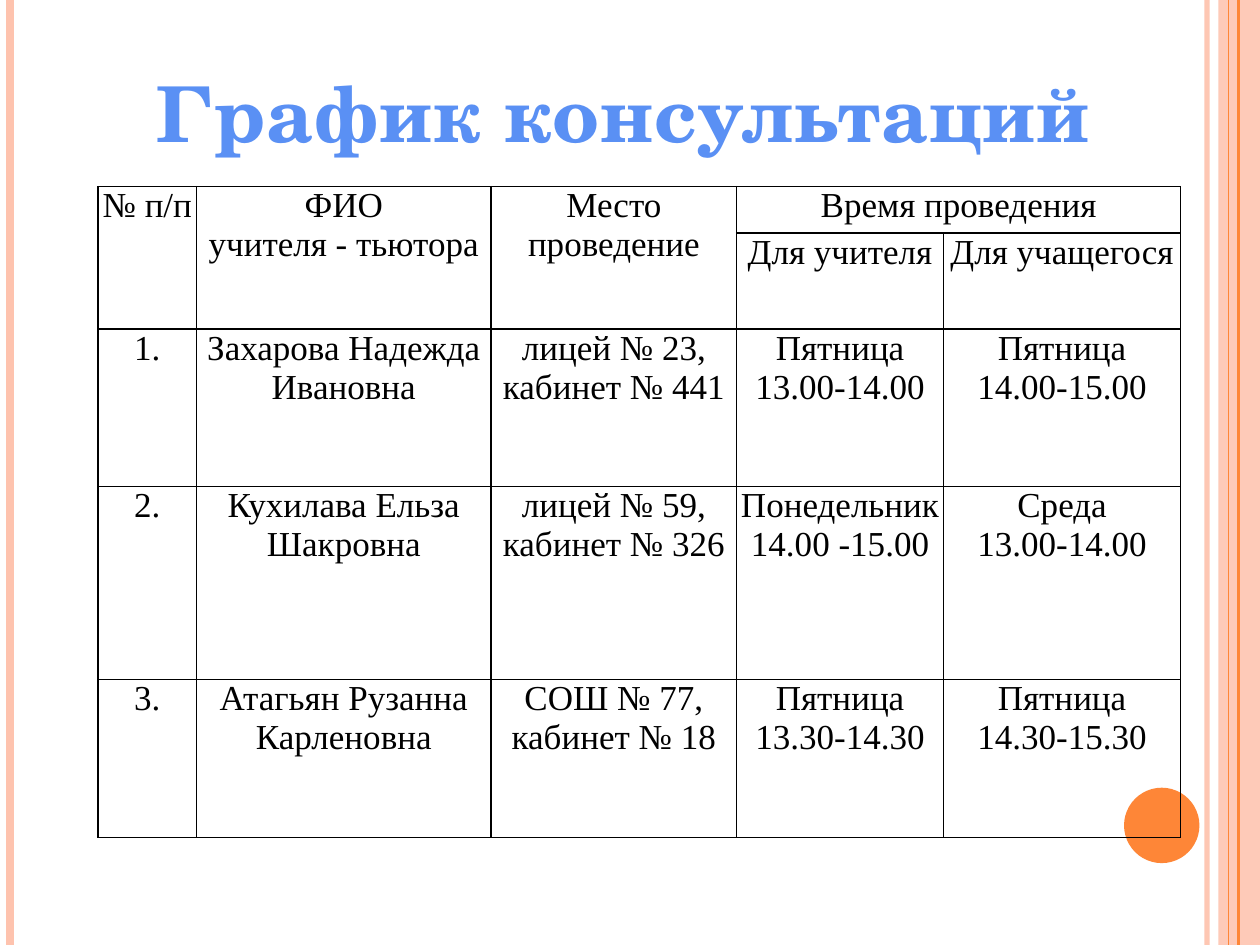
from dataclasses import dataclass
from lxml.etree import SubElement as Sub
from pptx import Presentation
from pptx.dml.color import RGBColor as Rgb
from pptx.enum.shapes import MSO_CONNECTOR as Link, MSO_SHAPE as Kind
from pptx.enum.text import MSO_ANCHOR as Anchor, MSO_AUTO_SIZE as Fit, PP_ALIGN as Align
from pptx.oxml.ns import qn
from pptx.util import Cm, Pt


@dataclass(frozen=True)
class Theme:
    """Colours, fonts and type sizes."""
    pink: str = "FEC3AE"
    orange: str = "FE8637"
    blue: str = "5A90F4"
    ink: str = "000000"
    head: str = "TeX Gyre Schola"
    body: str = "Times New Roman"
    big: int = 44
    text: int = 20


THEME = Theme()
WIDE, HIGH = 25.4, 19.05
RAILS = [
    (24.33, THEME.pink, 3, 93),
    (0.2, THEME.pink, 4.5, 100),
    (24.97, THEME.orange, 1.5, 100),
    (24.77, THEME.orange, 0.75, 100),
]
COLS = [1.98, 5.94, 4.95, 4.17, 4.78]
ROWS = [0.94, 1.93, 3.18, 3.89, 3.18]
CELLS = [
    ["№ п/п", "ФИО\nучителя - тьютора", "Место проведение", "Время проведения", ""],
    ["", "", "", "Для учителя", "Для учащегося"],
    ["1.", "Захарова Надежда Ивановна", "лицей № 23,\nкабинет № 441",
     "Пятница\n13.00-14.00", "Пятница\n14.00-15.00"],
    ["2.", "Кухилава Ельза Шакровна", "лицей № 59,\nкабинет № 326",
     "Понедельник\n14.00 -15.00", "Среда\n13.00-14.00"],
    ["3.", "Атагьян Рузанна Карленовна", "СОШ № 77,\nкабинет № 18",
     "Пятница\n13.30-14.30", "Пятница\n14.30-15.30"],
]


def fade(part, rate):
    """Set the opacity of a solid fill or line, in percent."""
    for tone in part.iter(qn("a:srgbClr")):
        Sub(tone, qn("a:alpha"), val=str(rate * 1000))


def style(para, face, size, tone, bold=False):
    """Centre a paragraph and set its font."""
    para.alignment = Align.CENTER
    font = para.font
    font.name, font.size, font.bold = face, Pt(size), bold
    font.color.rgb = Rgb.from_string(tone)


def paint(slide, kind, box, tone):
    """Add a plain filled shape."""
    shape = slide.shapes.add_shape(kind, *map(Cm, box))
    shape.shadow.inherit = False
    shape.fill.solid()
    shape.fill.fore_color.rgb = Rgb.from_string(tone)
    shape.line.fill.background()
    return shape


def add_frame(slide, box):
    """Draw the side rails, the band and the disc."""
    left, top, wide, high = box
    band = paint(slide, Kind.RECTANGLE, (left + wide - 0.84, top, 0.84, high), THEME.pink)
    fade(band.element.spPr, 87)
    for x, tone, width, rate in RAILS:
        rail = slide.shapes.add_connector(
            Link.STRAIGHT, Cm(left + x), Cm(top), Cm(left + x), Cm(top + high))
        rail.line.width = Pt(width)
        rail.line.color.rgb = Rgb.from_string(tone)
        Sub(rail.element.spPr, qn("a:effectLst"))
        if rate < 100:
            fade(rail.element.spPr, rate)
    paint(slide, Kind.OVAL, (left + 22.66, top + 15.88, 1.52, 1.52), THEME.orange)


def add_title(slide, box):
    """Fill and place the title."""
    title = slide.shapes.title
    title.left, title.top, title.width, title.height = map(Cm, box)
    frame = title.text_frame
    frame.text = "График консультаций"
    frame.word_wrap = False
    frame.auto_size = Fit.SHAPE_TO_FIT_TEXT
    frame.vertical_anchor = Anchor.MIDDLE
    para = frame.paragraphs[0]
    style(para, THEME.head, THEME.big, THEME.blue, True)
    para._p.pPr.find(qn("a:defRPr")).set("spc", "50")


def edge(cell):
    """Rule all four sides of a cell."""
    props = cell._tc.get_or_add_tcPr()
    for side in "LRTB":
        line = Sub(props, qn(f"a:ln{side}"), w=str(Pt(1)))
        fill = Sub(line, qn("a:solidFill"))
        Sub(fill, qn("a:srgbClr"), val=THEME.ink)


def add_plan(slide, box):
    """Build the table of consultations."""
    table = slide.shapes.add_table(len(ROWS), len(COLS), *map(Cm, box)).table
    table.first_row = table.horz_banding = False
    for col, wide in zip(table.columns, COLS):
        col.width = Cm(wide)
    for row, high, texts in zip(table.rows, ROWS, CELLS):
        row.height = Cm(high)
        for cell, text in zip(row.cells, texts):
            edge(cell)
            cell.fill.background()
            cell.margin_left = cell.margin_right = Cm(0.05)
            cell.margin_top = cell.margin_bottom = 0
            cell.text = text
            for para in cell.text_frame.paragraphs:
                style(para, THEME.body, THEME.text, THEME.ink)
    for col in range(3):
        table.cell(0, col).merge(table.cell(1, col))
    table.cell(0, 3).merge(table.cell(0, 4))


def main():
    """Build and save the slide."""
    deck = Presentation()
    deck.slide_width, deck.slide_height = Cm(WIDE), Cm(HIGH)
    slide = deck.slides.add_slide(deck.slide_layouts[5])
    add_frame(slide, (0, 0, WIDE, HIGH))
    add_title(slide, (2.77, 1.19, 19.61, 2.13))
    add_plan(slide, (1.98, 3.76, sum(COLS), sum(ROWS)))
    deck.save("out.pptx")


if __name__ == "__main__":
    main()
